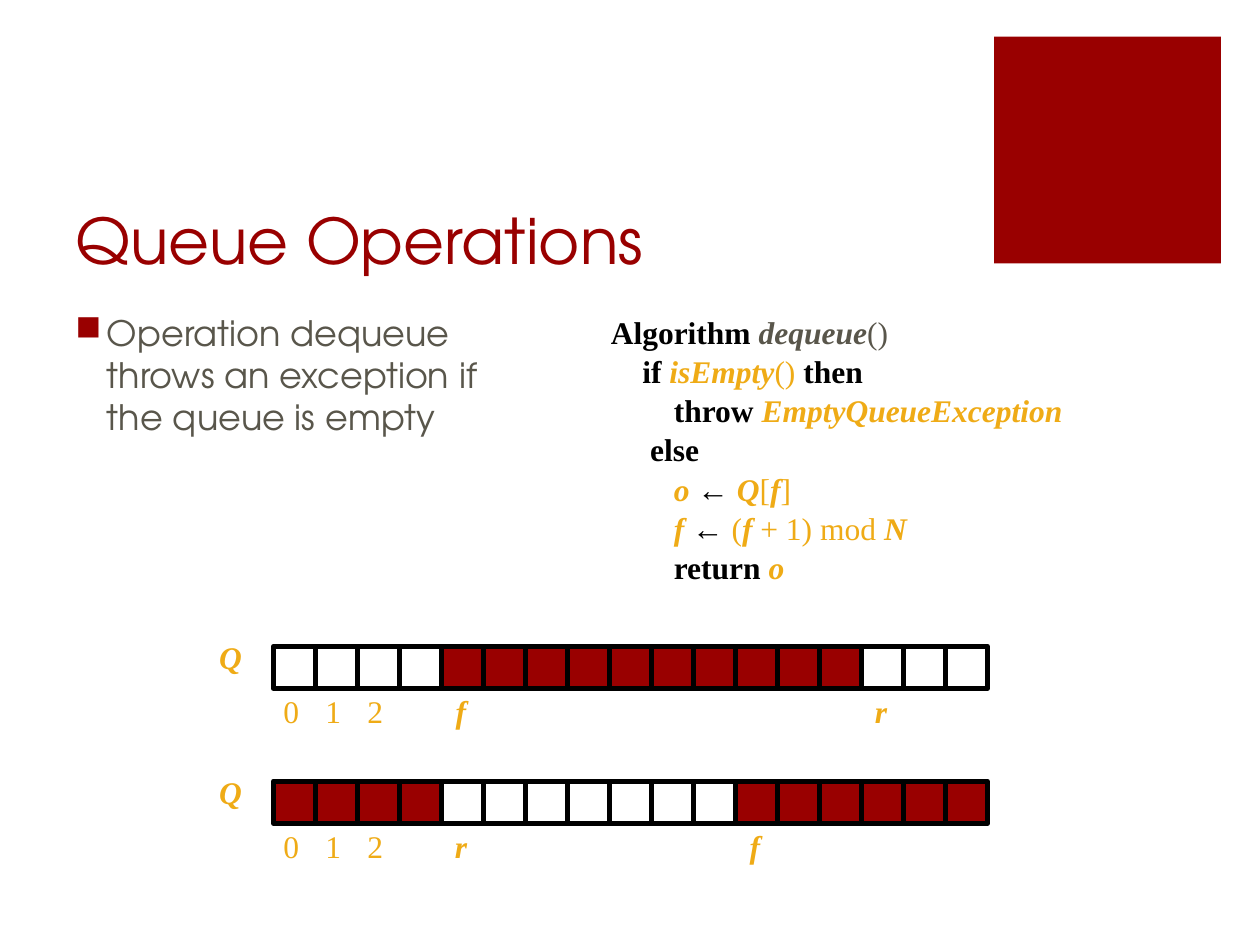
from dataclasses import dataclass
from typing import NamedTuple

from lxml import etree
from pptx import Presentation
from pptx.dml.color import RGBColor
from pptx.enum import shapes, text
from pptx.oxml import ns
from pptx.util import Inches, Pt


@dataclass(frozen=True)
class Theme:
    red: RGBColor = RGBColor(0x99, 0x00, 0x00)
    grey: RGBColor = RGBColor(0x59, 0x56, 0x4B)
    gold: RGBColor = RGBColor(0xEF, 0xAB, 0x16)
    black: RGBColor = RGBColor(0x00, 0x00, 0x00)
    white: RGBColor = RGBColor(0xFF, 0xFF, 0xFF)
    sans: str = "TeX Gyre Adventor"
    serif: str = "Times New Roman"
    title_size: int = Pt(36)
    body_size: int = Pt(20)
    code_size: int = Pt(18)
    code_spacing: float = 1.04
    cell_border: int = Pt(3)


THEME = Theme()


class Style(NamedTuple):
    color: RGBColor
    bold: bool = False
    italic: bool = False


KEYWORD = Style(THEME.black, bold=True)
SYMBOL = Style(THEME.black)
METHOD = Style(THEME.grey, bold=True, italic=True)
PARENS = Style(THEME.grey)
NAME = Style(THEME.gold, bold=True, italic=True)
PLAIN = Style(THEME.gold)

TAB_STOPS = (0.25, 0.5)
ALGORITHM = (
    (("Algorithm ", KEYWORD), ("dequeue", METHOD), ("()", PARENS)),
    (("\tif ", KEYWORD), ("isEmpty", NAME), ("() ", PLAIN), ("then", KEYWORD)),
    (("\t\tthrow ", KEYWORD), ("EmptyQueueException", NAME)),
    (("\t ", SYMBOL), ("else", KEYWORD)),
    (("\t\t", PLAIN), ("o ", NAME), ("← ", SYMBOL), ("Q", NAME), ("[", PLAIN),
     ("f", NAME), ("]", PLAIN)),
    (("\t\t", PLAIN), ("f ", NAME), ("← ", SYMBOL), ("(", PLAIN), ("f ", NAME),
     ("+ 1) mod ", PLAIN), ("N", NAME)),
    (("\t\t", PLAIN), ("return ", KEYWORD), ("o", NAME)),
)

CELL_COUNT = 17
CELL_SIZE = 1 / 3
CELLS_LEFT = 2.17


@dataclass(frozen=True)
class QueueArray:
    """A circular array holding items from front up to, not including, rear."""
    top: float
    front: int
    rear: int

    def holds(self, index: int) -> bool:
        return (index - self.front) % CELL_COUNT < (self.rear - self.front) % CELL_COUNT


QUEUES = (QueueArray(top=5.05, front=4, rear=14), QueueArray(top=6.12, front=11, rear=4))


def add_text_frame(container, left: float, top: float, width: float, height: float):
    box = container.add_textbox(Inches(left), Inches(top), Inches(width), Inches(height))
    box.text_frame.word_wrap = True
    return box.text_frame


def set_font(font, name: str, size: int, style: Style) -> None:
    font.name, font.size = name, size
    apply_style(font, style)


def apply_style(font, style: Style) -> None:
    font.color.rgb = style.color
    font.bold, font.italic = style.bold, style.italic


def add_square(container, left: float, top: float, size: float, fill: RGBColor):
    square = container.add_shape(shapes.MSO_SHAPE.RECTANGLE, Inches(left), Inches(top),
                                 Inches(size), Inches(size))
    square.shadow.inherit = False
    square.fill.solid()
    square.fill.fore_color.rgb = fill
    square.line.fill.background()
    return square


def add_title(slide) -> None:
    frame = add_text_frame(slide.shapes, 0.5, 1, 7.12, 1.25)
    frame.vertical_anchor = text.MSO_ANCHOR.BOTTOM
    paragraph = frame.paragraphs[0]
    paragraph.text = "Queue Operations"
    set_font(paragraph.font, THEME.sans, THEME.title_size, Style(THEME.red))


def add_bullet_text(slide) -> None:
    frame = add_text_frame(slide.shapes, 0.5, 2.42, 3.39, 4.28)
    paragraph = frame.paragraphs[0]
    paragraph.text = "Operation dequeue throws an exception if the queue is empty"
    paragraph.space_before = Pt(18)
    properties = paragraph._p.get_or_add_pPr()
    properties.set("marL", str(Inches(0.25)))
    properties.set("indent", str(-Inches(0.25)))
    bullet_color = etree.SubElement(properties, ns.qn("a:buClr"))
    etree.SubElement(bullet_color, ns.qn("a:srgbClr"), val=str(THEME.red))
    etree.SubElement(properties, ns.qn("a:buChar"), char="■")
    set_font(paragraph.font, THEME.sans, THEME.body_size, Style(THEME.grey))


def add_algorithm(slide) -> None:
    frame = add_text_frame(slide.shapes, 4.75, 2.42, 4.83, 2.91)
    for number, line in enumerate(ALGORITHM):
        paragraph = frame.add_paragraph() if number else frame.paragraphs[0]
        paragraph.line_spacing = THEME.code_spacing
        tabs = etree.SubElement(paragraph._p.get_or_add_pPr(), ns.qn("a:tabLst"))
        for stop in TAB_STOPS:
            etree.SubElement(tabs, ns.qn("a:tab"), pos=str(Inches(stop)), algn="l")
        paragraph.font.name, paragraph.font.size = THEME.serif, THEME.code_size
        for words, style in line:
            run = paragraph.add_run()
            run.text = words
            apply_style(run.font, style)


def add_label(container, words: str, left: float, top: float, width: float, style: Style,
              alignment=text.PP_ALIGN.CENTER) -> None:
    frame = add_text_frame(container, left, top, width, 0.4)
    frame.margin_left = frame.margin_right = frame.margin_top = frame.margin_bottom = 0
    paragraph = frame.paragraphs[0]
    paragraph.text = words
    paragraph.alignment = alignment
    paragraph.line_spacing = THEME.code_spacing
    set_font(paragraph.font, THEME.serif, THEME.code_size, style)


def cell_left(index: int) -> float:
    return CELLS_LEFT + index * CELL_SIZE


def add_queue(slide, queue: QueueArray) -> None:
    group = slide.shapes.add_group_shape().shapes
    add_label(group, "Q", 1.67, queue.top, 0.32, NAME)
    label_top = queue.top + 0.43
    for index in range(3):
        add_label(group, str(index), cell_left(index) + 0.08, label_top, 0.17, PLAIN,
                  text.PP_ALIGN.LEFT)
    for marker, index in (("f", queue.front), ("r", queue.rear)):
        add_label(group, marker, cell_left(index), label_top, 0.31, NAME)
    for index in range(CELL_COUNT):
        fill = THEME.red if queue.holds(index) else THEME.white
        cell = add_square(group, cell_left(index), queue.top + 0.08, CELL_SIZE, fill)
        cell.line.color.rgb = THEME.black
        cell.line.width = THEME.cell_border


def main() -> None:
    presentation = Presentation()
    presentation.slide_width, presentation.slide_height = Inches(10), Inches(7.5)
    slide = presentation.slides.add_slide(presentation.slide_layouts[6])
    add_square(slide.shapes, 7.89, 0.29, 1.8, THEME.red)
    add_title(slide)
    add_bullet_text(slide)
    add_algorithm(slide)
    for queue in QUEUES:
        add_queue(slide, queue)
    presentation.save("out.pptx")


if __name__ == "__main__":
    main()
